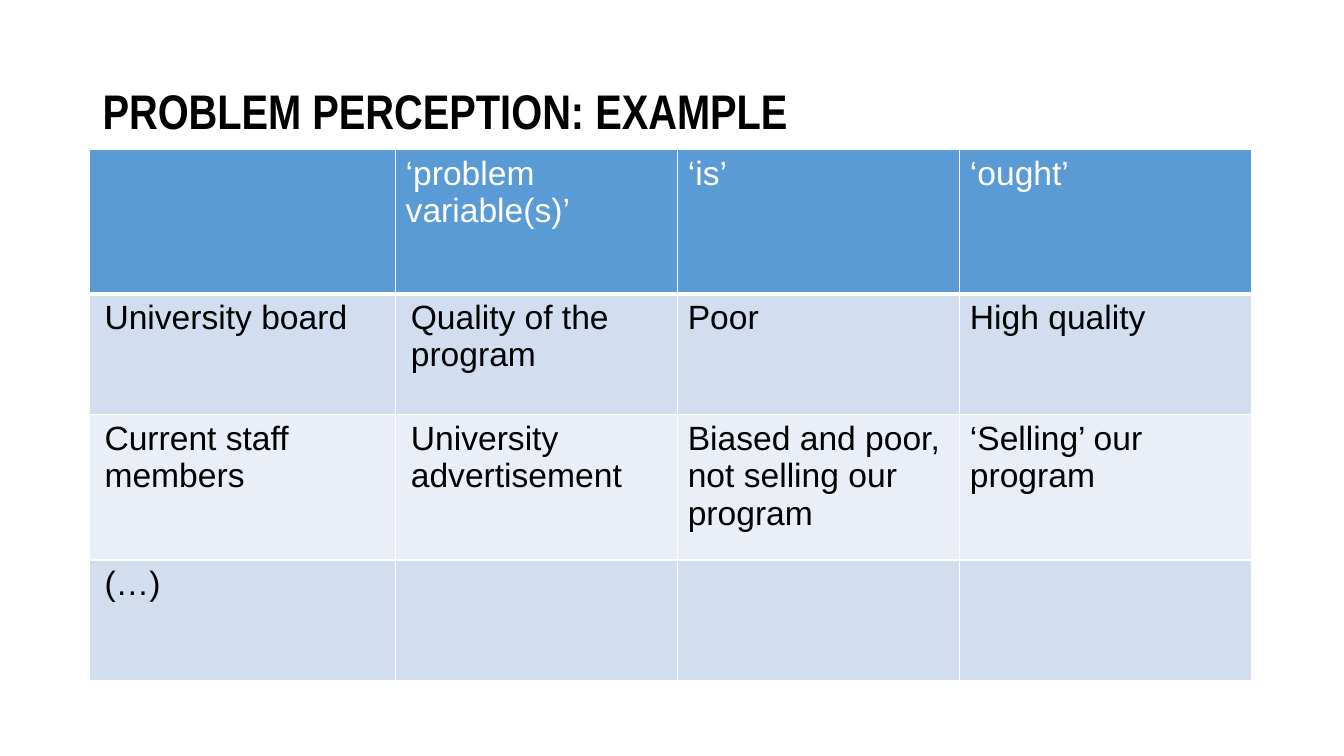
from lxml.etree import SubElement
from pptx import Presentation
from pptx.dml.color import RGBColor
from pptx.enum.text import MSO_ANCHOR, MSO_AUTO_SIZE, PP_ALIGN
from pptx.oxml.ns import qn
from pptx.util import Cm, Pt

TITLE = "PROBLEM PERCEPTION: EXAMPLE"
ROWS = [
    ("", "‘problem variable(s)’", "‘is’", "‘ought’"),
    ("University board", "Quality of the program", "Poor", "High quality"),
    ("Current staff members", "University advertisement",
     "Biased and poor, not selling our program", "‘Selling’ our program"),
    ("(…)", "", "", ""),
]
COLORS = {"header": "5B9BD5", "odd": "D2DEEF", "even": "EAEFF7",
          "white": "FFFFFF", "black": "000000"}
COLUMN_WIDTHS = [Cm(7.72), Cm(7.11), Cm(7.11), Cm(7.34)]
ROW_HEIGHTS = [Cm(3.63), Cm(3.05), Cm(3.66), Cm(3.05)]
INDENTED_COLUMNS = 2


def write(frame, text, font="Arial", size=24, color="black", bold=False, spacing=1.0):
    para = frame.paragraphs[0]
    para.alignment = PP_ALIGN.LEFT
    para.line_spacing = spacing
    span = para.add_run()
    span.text = text
    span.font.name = font
    span.font.size = Pt(size)
    span.font.bold = bold
    span.font.color.rgb = RGBColor.from_string(COLORS[color])


def set_borders(cell, bottom=1):
    """Draw white cell borders; must run before the cell gets its fill."""
    properties = cell._tc.get_or_add_tcPr()
    for side, width in (("L", 1), ("R", 1), ("T", 1), ("B", bottom)):
        line = SubElement(properties, qn(f"a:ln{side}"), w=str(Pt(width)))
        fill = SubElement(line, qn("a:solidFill"))
        SubElement(fill, qn("a:srgbClr"), val=COLORS["white"])


def add_title(page):
    title = page.shapes.title
    title.left, title.top, title.width, title.height = Cm(2.33), Cm(1.02), Cm(29.21), Cm(3.68)
    frame = title.text_frame
    frame.word_wrap = True
    frame.auto_size = MSO_AUTO_SIZE.NONE
    frame.vertical_anchor = MSO_ANCHOR.MIDDLE
    write(frame, TITLE, font="Arial Narrow", size=34.7, bold=True, spacing=0.9)


def add_perception_table(page):
    table = page.shapes.add_table(len(ROWS), len(ROWS[0]), Cm(2.25), Cm(3.77),
                                  sum(COLUMN_WIDTHS), sum(ROW_HEIGHTS)).table
    for column, width in zip(table.columns, COLUMN_WIDTHS):
        column.width = width
    for row, height in zip(table.rows, ROW_HEIGHTS):
        row.height = height
    for r, texts in enumerate(ROWS):
        is_header = r == 0
        shade = "header" if is_header else "odd" if r % 2 else "even"
        for c, text in enumerate(texts):
            cell = table.cell(r, c)
            set_borders(cell, bottom=3 if is_header else 1)
            cell.fill.solid()
            cell.fill.fore_color.rgb = RGBColor.from_string(COLORS[shade])
            if not text:
                continue
            write(cell.text_frame, text, color="white" if is_header else "black")
            if not is_header and c < INDENTED_COLUMNS:
                indent = cell.text_frame.paragraphs[0]._p.get_or_add_pPr()
                indent.set("marL", str(Cm(0.13)))
                indent.set("indent", "0")


def main():
    deck = Presentation()
    deck.slide_width, deck.slide_height = Cm(33.87), Cm(19.05)
    page = deck.slides.add_slide(deck.slide_layouts[5])
    add_title(page)
    add_perception_table(page)
    deck.save("out.pptx")


if __name__ == "__main__":
    main()
